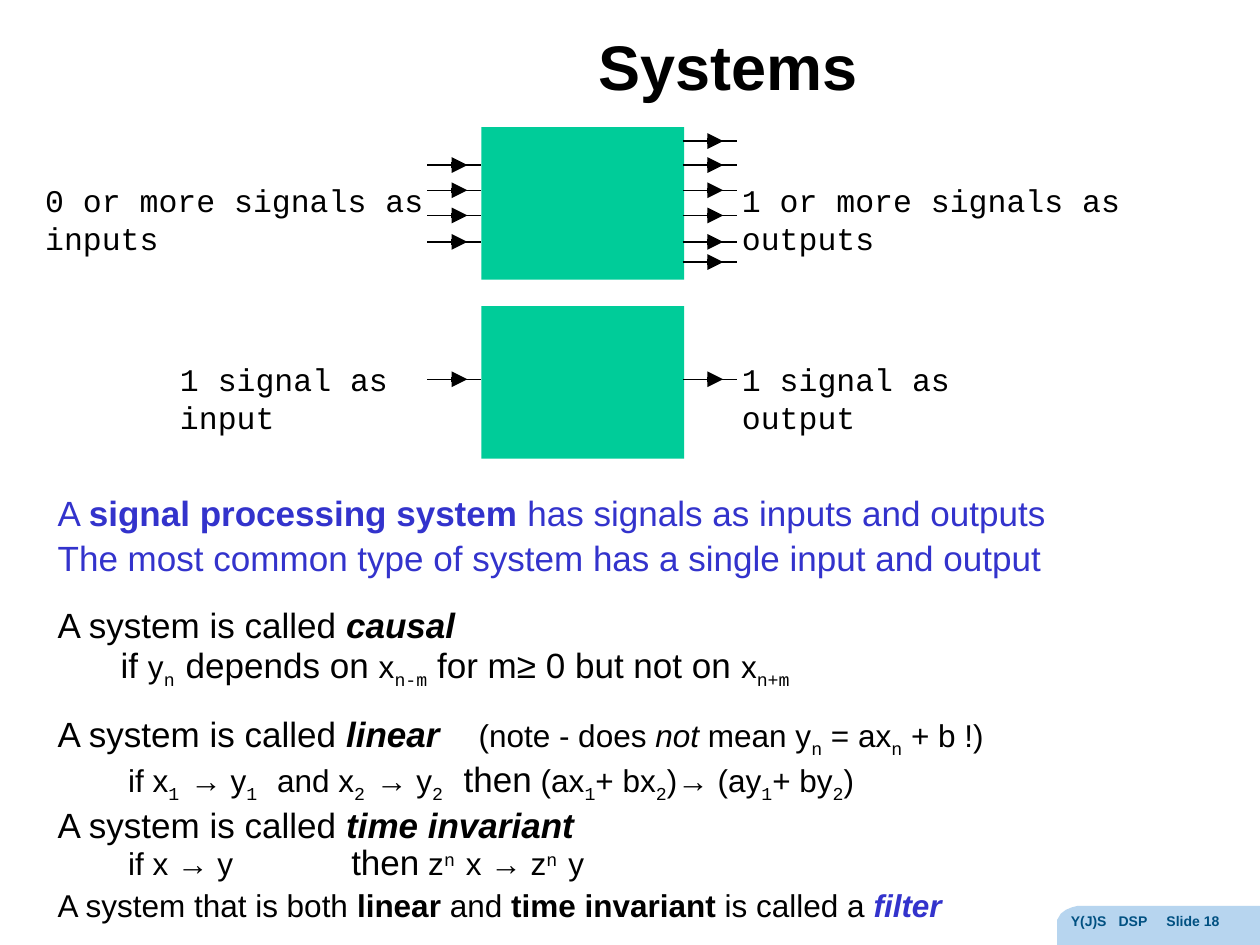
from pptx import Presentation
from pptx.dml.color import RGBColor as Rgb
from pptx.enum.shapes import MSO_CONNECTOR as Link, MSO_SHAPE as Form
from pptx.enum.text import MSO_ANCHOR as Anchor, PP_ALIGN as Align
from pptx.oxml.ns import qn
from pptx.util import Inches, Pt
from lxml.etree import SubElement as Sub

BLACK, BLUE, GREEN, PALE, NAVY = "000000", "3333CC", "00CC99", "B7D5EF", "005081"


def paint(hue):
    return Rgb.from_string(hue)


class Deck:
    """Holds the style and the current slide, and draws each kind of element."""

    sans, mono = "Arial", "Courier New"

    def __init__(self):
        self.prs = Presentation()
        self.prs.slide_width, self.prs.slide_height = Inches(10), Inches(7.5)
        self.slide = self.prs.slides.add_slide(self.prs.slide_layouts[6])
        self.shapes = self.slide.shapes

    def fill(self, shape, hue):
        shape.shadow.inherit = False
        shape.fill.solid()
        shape.fill.fore_color.rgb = paint(hue)
        shape.line.fill.background()

    def rect(self, x, y, w, h):
        self.fill(self.shapes.add_shape(Form.RECTANGLE, *map(Inches, (x, y, w, h))), GREEN)

    def outline(self, points, hue):
        first, *rest = [(Inches(x), Inches(y)) for x, y in points]
        pen = self.shapes.build_freeform(*first)
        pen.add_line_segments(rest, close=True)
        self.fill(pen.convert_to_shape(), hue)

    def line(self, x, end, y, width, head=False):
        link = self.shapes.add_connector(Link.STRAIGHT, *map(Inches, (x, y, end, y)))
        link.line.color.rgb, link.line.width = paint(BLACK), Pt(width)
        if head:
            Sub(link.line._get_or_add_ln(), qn("a:tailEnd"), type="triangle")
        Sub(link._element.spPr, qn("a:effectLst"))

    def arrow(self, x, y):
        self.line(x, x + 0.43, y, 0.75)
        self.line(x + 0.19, x + 0.32, y, 3, True)

    def frame(self, x, y, w, h):
        frame = self.shapes.add_textbox(*map(Inches, (x, y, w, h))).text_frame
        frame.word_wrap = True
        return frame

    def style(self, para, size, hue=BLACK, face=sans, bold=None):
        font = para.font
        font.size, font.name, font.bold = Pt(size), face, bold
        font.color.rgb = paint(hue)

    def tabs(self, para, stops):
        props = para._p.get_or_add_pPr()
        items = Sub(props, qn("a:tabLst"))
        for stop in stops:
            Sub(items, qn("a:tab"), pos=str(Inches(stop)), algn="l")

    def text(self, box, words, size, hue=BLACK, face=sans, bold=None, gap=0, stops=()):
        frame = self.frame(*box)
        para = frame.paragraphs[0]
        para.text = words
        para.space_before = Pt(gap)
        if stops:
            self.tabs(para, stops)
        self.style(para, size, hue, face, bold)
        return frame

    def run(self, para, words, marks=""):
        run = para.add_run()
        run.text = words
        font = run.font
        if "b" in marks:
            font.bold = True
        if "i" in marks:
            font.italic = True
        if "L" in marks:
            font.size = Pt(20)
        if "s" in marks:
            font.size = Pt(18)
        if "c" in marks:
            font.color.rgb = paint(BLUE)
        if "_" in marks or "^" in marks:
            font.name, font.size = self.mono, Pt(18)
            run._r.get_or_add_rPr().set("baseline", "-25000" if "_" in marks else "30000")

    def body(self, box, rows):
        frame = self.frame(*box)
        for k, (size, hue, lead, indent, stops, runs) in enumerate(rows):
            para = frame.add_paragraph() if k else frame.paragraphs[0]
            para.line_spacing, para.space_before = lead, Pt(2)
            para._p.get_or_add_pPr().set("marL", str(Inches(indent)))
            if stops:
                self.tabs(para, stops)
            self.style(para, size, hue)
            for part in runs:
                self.run(para, *part)


CALLED = ("A system is called ",)
ROWS = [
    (20, BLUE, 1, 0, (), [("A ",), ("signal processing system", "b"),
                          (" has signals as inputs and outputs",)]),
    (20, BLUE, 1, 0, (), [("The most common type of system has a single input and output",)]),
    (20, BLACK, 1.5, 0, (), [CALLED, ("causal", "bi")]),
    (20, BLACK, 0.8, 0.5, (), [
        ("if ",), ("y", "s"), ("n ", "_"), ("depends on ",), ("x", "s"), ("n-m", "_"),
        (" for m≥ 0 but not on ",), ("x", "s"), ("n+m", "_")]),
    (18, BLACK, 1.5, 0, (3.34,), [
        (*CALLED, "L"), ("linear", "biL"), ("\t(note - does ",), ("not", "i"),
        (" mean y",), ("n", "_"), (" = ax",), ("n", "_"), (" + b !)",)]),
    (18, BLACK, 0.8, 0.56, (), [
        ("if x",), ("1 ", "_"), ("→ y",), ("1 ", "_"), (" and x",), ("2 ", "_"),
        ("→ y",), ("2 ", "_"), (" then", "L"), (" (ax",), ("1", "_"), ("+ bx",),
        ("2", "_"), (")→ (ay",), ("1", "_"), ("+ by",), ("2", "_"), (")",)]),
    (20, BLACK, 1, 0, (), [CALLED, ("time invariant", "bi")]),
    (18, BLACK, 0.8, 0.56, (1.77,), [
        ("if x → y\t",), ("then", "L"), (" z",), ("n ", "^"), ("x → z",),
        ("n ", "^"), ("y",)]),
    (18, BLACK, 1, 0, (), [
        ("A system that is both ",), ("linear", "b"), (" and ",), ("time invariant", "b"),
        (" is called a ",), ("filter", "bic")]),
]
INS = [1.31, 1.51, 1.71, 1.92]
SYSTEMS = [
    (1.01, INS, [1.12, *INS, 2.08], 1.39,
     (0.26, 3.32, "0 or more signals as inputs"), (3.36, "1 or more signals as outputs")),
    (2.43, [3.01], [3.01], 2.81, (1.33, 2.15, "1 signal as input"), (2.24, "1 signal as output")),
]


def main():
    deck = Deck()
    deck.outline([(10, 7.19), (10, 7.5), (8.39, 7.5), (8.39, 7.34), (8.39, 7.3), (8.42, 7.25),
                  (8.46, 7.22), (8.51, 7.2), (8.55, 7.19)], PALE)
    deck.text((8.4, 7.19, 1.6, 0.26), "Y(J)S\tDSP\tSlide 18", 8, NAVY, bold=True,
              gap=3, stops=(0.38, 0.76))
    title = deck.text((2.12, 0.11, 7.31, 0.89), "Systems", 36, bold=True)
    title.vertical_anchor = Anchor.MIDDLE
    title.paragraphs[0].alignment = Align.CENTER
    title.paragraphs[0].line_spacing = 0.9
    deck.body((0.36, 3.85, 8.83, 3.44), ROWS)
    for top, ins, outs, y, (x, wide, label), (span, note) in SYSTEMS:
        deck.rect(3.82, top, 1.61, 1.21)
        for left, levels in ((3.39, ins), (5.42, outs)):
            for level in levels:
                deck.arrow(left, level)
        deck.text((x, y, wide, 0.4), label, 18, face=deck.mono, gap=4)
        deck.text((5.79, y, span, 0.4), note, 18, face=deck.mono, gap=4)
    deck.prs.save("out.pptx")


if __name__ == "__main__":
    main()
